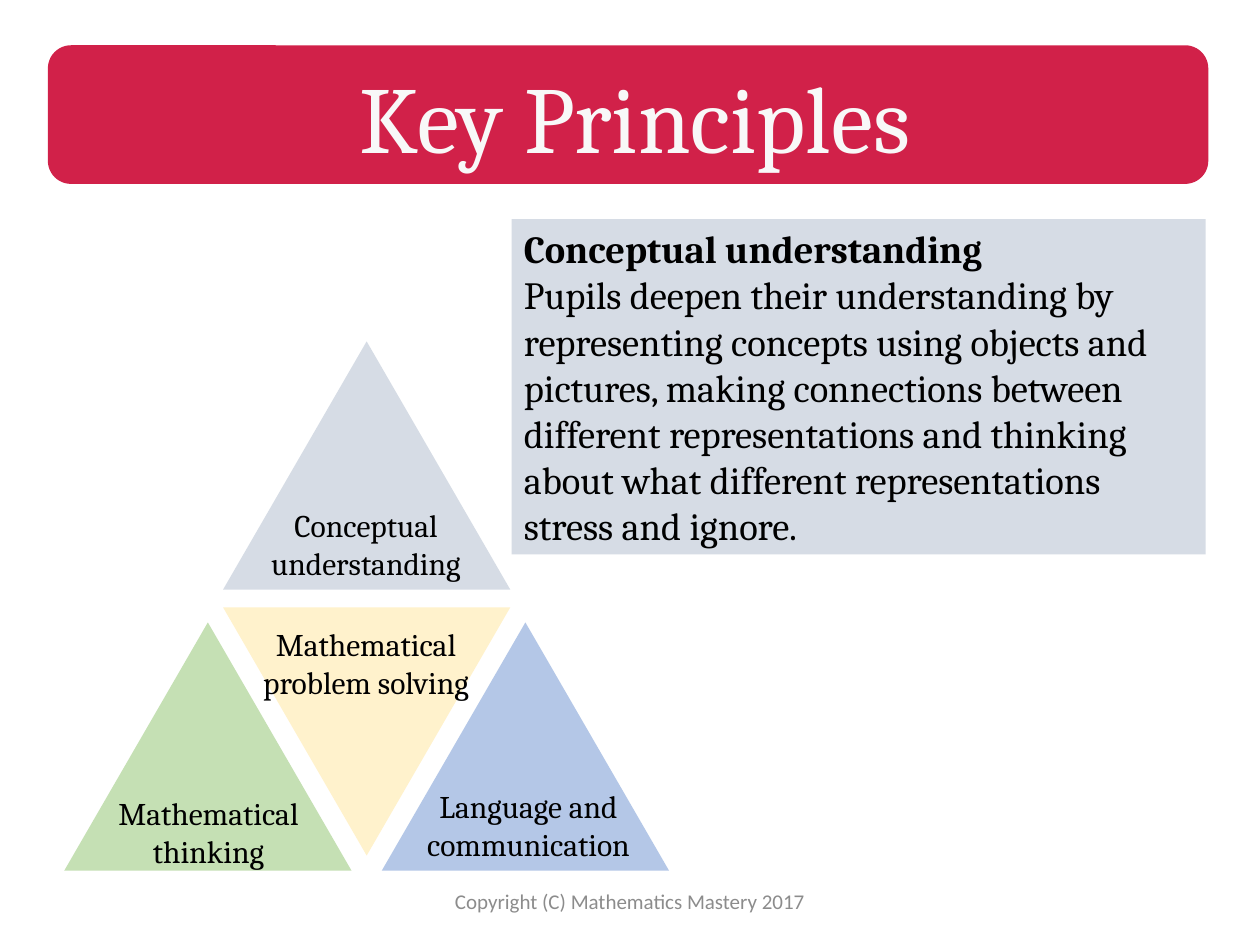
from pptx import Presentation
from pptx.dml.color import RGBColor
from pptx.enum.shapes import MSO_SHAPE
from pptx.enum.text import MSO_ANCHOR, PP_ALIGN
from pptx.util import Inches, Pt

RED = RGBColor(0xD1, 0x21, 0x49)
GREY_BLUE = RGBColor(0xD6, 0xDC, 0xE5)
BLUE = RGBColor(0xB4, 0xC7, 0xE7)
CREAM = RGBColor(0xFF, 0xF2, 0xCC)
GREEN = RGBColor(0xC5, 0xE0, 0xB4)
BLACK = RGBColor(0, 0, 0)
OFF_WHITE = RGBColor(0xF8, 0xF8, 0xF8)
GREY = RGBColor(0x8C, 0x8C, 0x8C)

# Content
TITLE = "Key Principles"
HEADING = "Conceptual understanding"
BODY = ("Pupils deepen their understanding by representing concepts using "
        "objects and pictures, making connections between different "
        "representations and thinking about what different representations "
        "stress and ignore.")
FOOTER = "Copyright (C) Mathematics Mastery 2017"

# Pyramid: triangle size, centre of the top one, sideways step to the lower ones
TRI_W, TRI_H = 2.28, 1.97
CENTRE_X, STEP = 2.91, 1.26
# column, triangle top, rotation, fill
TRIANGLES = [
    (0, 2.71, 0, GREY_BLUE),
    (1, 4.94, 0, BLUE),
    (0, 4.82, 180, CREAM),
    (-1, 4.94, 0, GREEN),
]
# label, box
LABELS = [
    ("Mathematical problem solving", (1.98, 4.91, 1.85, 1.01)),
    ("Conceptual understanding", (1.88, 3.97, 2.05, 0.71)),
    ("Language and communication", (3.16, 6.2, 2.07, 0.71)),
    ("Mathematical thinking", (0.76, 6.25, 1.79, 0.71)),
]

prs = Presentation()
prs.slide_width, prs.slide_height = Inches(10), Inches(7.5)
slide = prs.slides.add_slide(prs.slide_layouts[6])


def add_block(kind, box, fill):
    s = slide.shapes.add_shape(kind, *map(Inches, box))
    s.shadow.inherit = False
    s.fill.solid()
    s.fill.fore_color.rgb = fill
    s.line.fill.background()
    return s


def write(s, lines, size, color, align=PP_ALIGN.CENTER,
          anchor=MSO_ANCHOR.MIDDLE, font="Cambria"):
    tf = s.text_frame
    tf.word_wrap = True
    tf.vertical_anchor = anchor
    tf.text = "\n".join(lines)
    for p in tf.paragraphs:
        p.alignment = align
        p.font.size, p.font.name = Pt(size), font
        p.font.color.rgb = color
    return tf


def add_text(box, text, size, color, **style):
    write(slide.shapes.add_textbox(*map(Inches, box)), [text], size, color, **style)


# Triangles and their labels
for column, top, rotation, fill in TRIANGLES:
    left = CENTRE_X + column * STEP - TRI_W / 2
    s = add_block(MSO_SHAPE.ISOSCELES_TRIANGLE, (left, top, TRI_W, TRI_H), fill)
    s.rotation = rotation
for label, box in LABELS:
    add_text(box, label, 18, BLACK, anchor=MSO_ANCHOR.TOP)

# Explanation panel
panel = add_block(MSO_SHAPE.RECTANGLE, (4.06, 1.74, 5.51, 2.66), GREY_BLUE)
tf = write(panel, [HEADING, BODY], 22, BLACK, align=PP_ALIGN.LEFT)
tf.paragraphs[0].font.bold = True

# Title banner and footer
add_block(MSO_SHAPE.ROUNDED_RECTANGLE, (0.38, 0.36, 9.21, 1.1), RED)
add_text((0.51, 0.41, 9.06, 1.01), TITLE, 54, OFF_WHITE)
add_text((3.31, 6.95, 3.38, 0.4), FOOTER, 12, GREY, font="Calibri")

prs.save("out.pptx")
